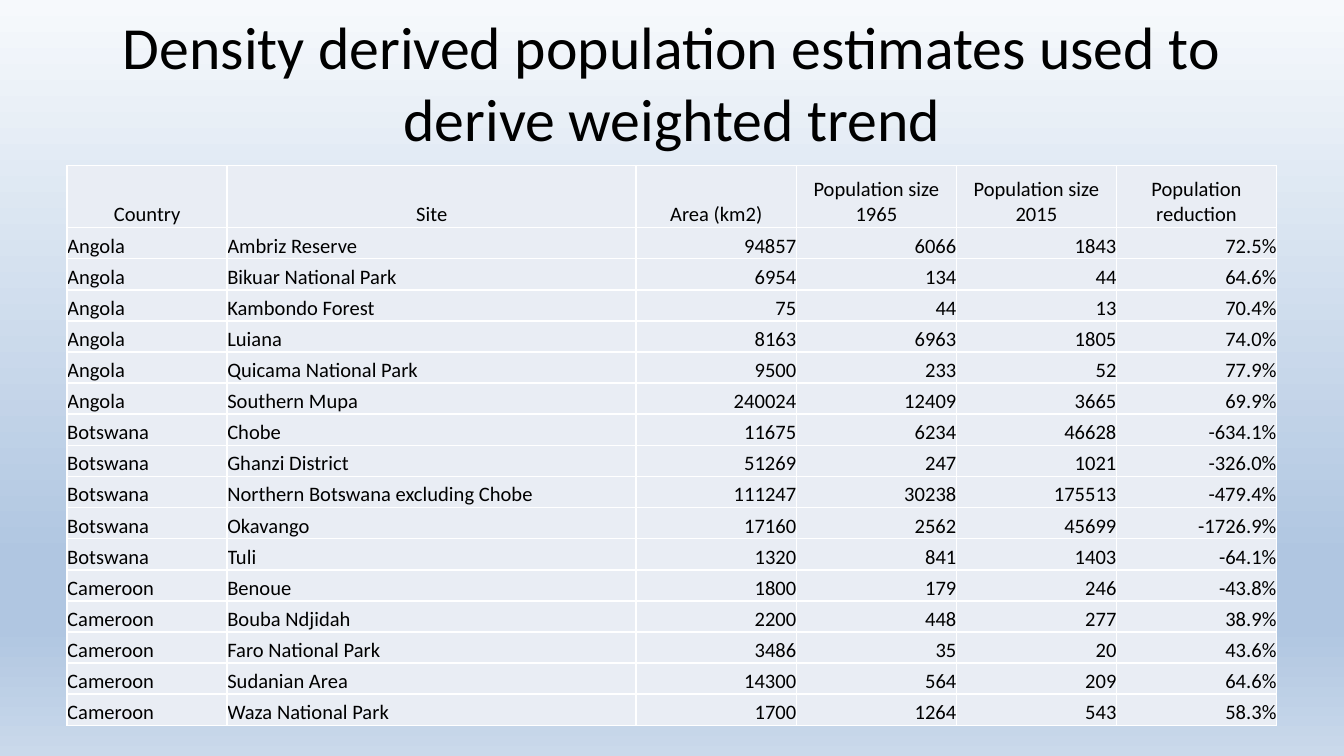
from lxml import etree
from pptx import Presentation
from pptx.dml.color import RGBColor
from pptx.enum.text import MSO_ANCHOR, MSO_AUTO_SIZE, PP_ALIGN
from pptx.oxml.ns import qn
from pptx.util import Inches, Pt

LEFT, CENTER, RIGHT = PP_ALIGN.LEFT, PP_ALIGN.CENTER, PP_ALIGN.RIGHT
MIDDLE, BOTTOM = MSO_ANCHOR.MIDDLE, MSO_ANCHOR.BOTTOM
NO_AUTOFIT = MSO_AUTO_SIZE.NONE

BLACK = RGBColor(0x00, 0x00, 0x00)
WHITE = RGBColor(0xFF, 0xFF, 0xFF)
CELL_FILL = RGBColor(0xE9, 0xED, 0xF4)
SKY_PALE = RGBColor(0xF6, 0xF9, 0xFC)
SKY_BLUE = RGBColor(0xB0, 0xC6, 0xE1)
SKY_LIGHT = RGBColor(0xCA, 0xD9, 0xEB)
BACKGROUND_STOPS = [(0, SKY_PALE), (74, SKY_BLUE), (83, SKY_BLUE), (100, SKY_LIGHT)]
FONT = "Calibri"

SLIDE_WIDTH = 10
SLIDE_HEIGHT = SLIDE_WIDTH * 9 / 16

TITLE = "Density derived population estimates used to derive weighted trend"
HEADERS = ["Country", "Site", "Area (km2)", "Population size 1965",
           "Population size 2015", "Population reduction"]
COLUMN_WIDTHS = [1.19, 3.04, 1.19, 1.19, 1.19, 1.19]
COLUMN_ALIGNMENTS = [LEFT, LEFT, RIGHT, RIGHT, RIGHT, RIGHT]
SITES = {
    "Angola": [
        ("Ambriz Reserve", "94857", "6066", "1843", "72.5%"),
        ("Bikuar National Park", "6954", "134", "44", "64.6%"),
        ("Kambondo Forest", "75", "44", "13", "70.4%"),
        ("Luiana", "8163", "6963", "1805", "74.0%"),
        ("Quicama National Park", "9500", "233", "52", "77.9%"),
        ("Southern Mupa", "240024", "12409", "3665", "69.9%"),
    ],
    "Botswana": [
        ("Chobe", "11675", "6234", "46628", "-634.1%"),
        ("Ghanzi District", "51269", "247", "1021", "-326.0%"),
        ("Northern Botswana excluding Chobe", "111247", "30238", "175513", "-479.4%"),
        ("Okavango", "17160", "2562", "45699", "-1726.9%"),
        ("Tuli", "1320", "841", "1403", "-64.1%"),
    ],
    "Cameroon": [
        ("Benoue", "1800", "179", "246", "-43.8%"),
        ("Bouba Ndjidah", "2200", "448", "277", "38.9%"),
        ("Faro National Park", "3486", "35", "20", "43.6%"),
        ("Sudanian Area", "14300", "564", "209", "64.6%"),
        ("Waza National Park", "1700", "1264", "543", "58.3%"),
    ],
}


def add_color(parent, color):
    etree.SubElement(parent, qn("a:srgbClr"), val=str(color))


def set_background(slide):
    fill = slide.background.fill
    fill.gradient()
    fill.gradient_angle = 270  # counter-clockwise, so top to bottom
    stop_list = next(slide.element.iter(qn("a:gsLst")))
    for stop in list(stop_list):
        stop_list.remove(stop)
    for percent, color in BACKGROUND_STOPS:
        stop = etree.SubElement(stop_list, qn("a:gs"), pos=str(percent * 1000))
        add_color(stop, color)


def format_paragraph(paragraph, size, alignment):
    paragraph.alignment = alignment
    paragraph.font.name = FONT
    paragraph.font.size = Pt(size)
    paragraph.font.bold = False
    paragraph.font.color.rgb = BLACK


def place_title(slide, left, top, width, height):
    title = slide.shapes.title
    title.left, title.top = Inches(left), Inches(top)
    title.width, title.height = Inches(width), Inches(height)
    frame = title.text_frame
    frame.text = TITLE
    frame.word_wrap = True
    frame.auto_size = NO_AUTOFIT
    frame.vertical_anchor = MIDDLE
    format_paragraph(frame.paragraphs[0], 32, CENTER)


def set_borders(cell, color, width):
    properties = cell._tc.get_or_add_tcPr()
    for side in ("a:lnL", "a:lnR", "a:lnT", "a:lnB"):
        line = etree.SubElement(properties, qn(side), w=str(Pt(width)))
        add_color(etree.SubElement(line, qn("a:solidFill")), color)


def fill_cell(cell, text, alignment):
    cell.text = text
    cell.vertical_anchor = BOTTOM
    cell.margin_left = cell.margin_right = cell.margin_top = cell.margin_bottom = 0
    format_paragraph(cell.text_frame.paragraphs[0], 11, alignment)
    set_borders(cell, WHITE, 1)
    cell.fill.solid()
    cell.fill.fore_color.rgb = CELL_FILL


def add_population_table(slide, left, top, width, height):
    rows = [HEADERS] + [(country, *site) for country, sites in SITES.items() for site in sites]
    table = slide.shapes.add_table(len(rows), len(HEADERS), Inches(left), Inches(top),
                                   Inches(width), Inches(height)).table
    table.first_row = table.horz_banding = False

    # The header is twice as tall as each data row
    unit = Inches(height / (len(rows) + 1))
    for index, row in enumerate(table.rows):
        row.height = unit * 2 if index == 0 else unit
    scale = width / sum(COLUMN_WIDTHS)
    for column, column_width in zip(table.columns, COLUMN_WIDTHS):
        column.width = Inches(column_width * scale)

    for row_index, values in enumerate(rows):
        for column_index, text in enumerate(values):
            alignment = CENTER if row_index == 0 else COLUMN_ALIGNMENTS[column_index]
            fill_cell(table.cell(row_index, column_index), text, alignment)


def main():
    presentation = Presentation()
    presentation.slide_width = Inches(SLIDE_WIDTH)
    presentation.slide_height = Inches(SLIDE_HEIGHT)
    title_only = presentation.slide_layouts[5]
    slide = presentation.slides.add_slide(title_only)
    set_background(slide)
    place_title(slide, 0.5, -0.02, 9, 1.25)
    add_population_table(slide, 0.5, 1.23, 9, 4.17)
    presentation.save("out.pptx")


if __name__ == "__main__":
    main()
